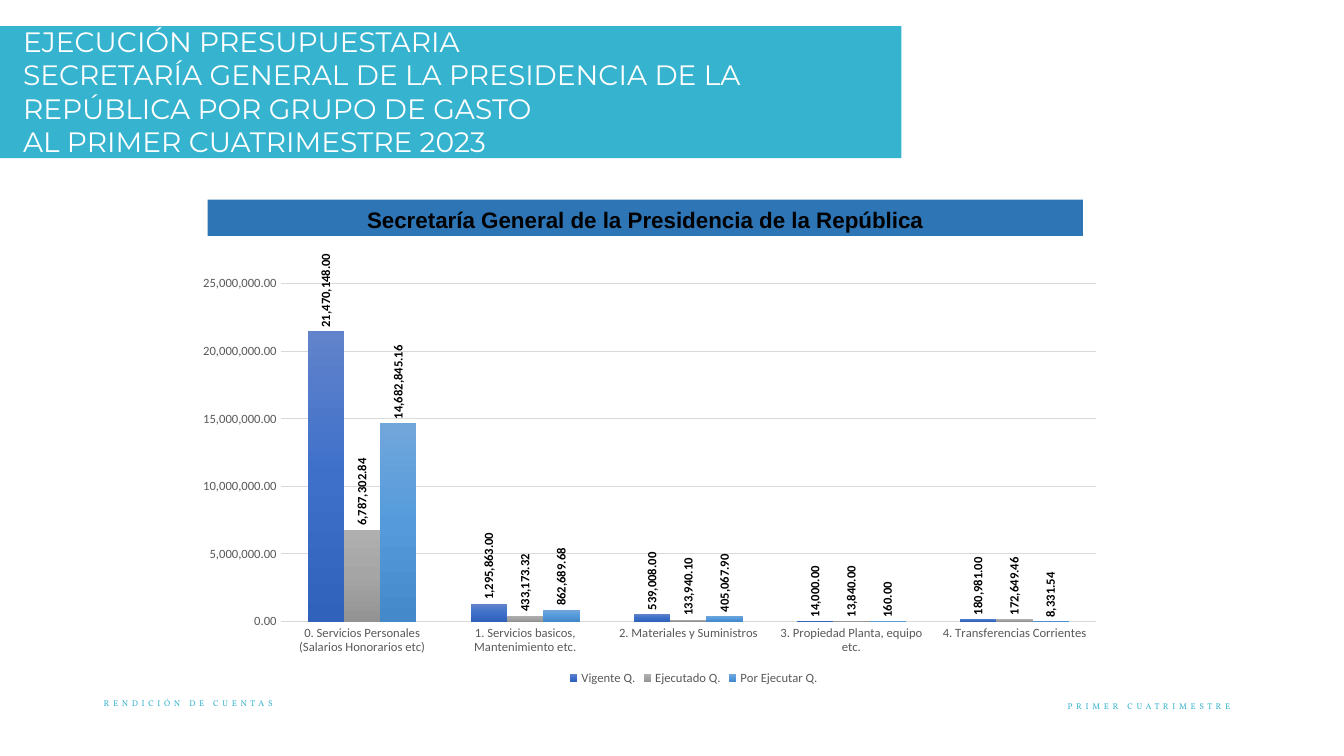
from lxml import etree
from pptx import Presentation
from pptx.chart.data import CategoryChartData
from pptx.dml.color import RGBColor
from pptx.enum.chart import XL_CHART_TYPE, XL_LABEL_POSITION, XL_LEGEND_POSITION, XL_TICK_MARK
from pptx.enum.shapes import MSO_SHAPE
from pptx.enum.text import MSO_ANCHOR, PP_ALIGN
from pptx.oxml.ns import qn
from pptx.util import Inches, Pt

COLUMNS = XL_CHART_TYPE.COLUMN_CLUSTERED
OUTSIDE_END = XL_LABEL_POSITION.OUTSIDE_END
BOTTOM = XL_LEGEND_POSITION.BOTTOM
NO_TICK = XL_TICK_MARK.NONE
RECTANGLE = MSO_SHAPE.RECTANGLE
TOP, MIDDLE = MSO_ANCHOR.TOP, MSO_ANCHOR.MIDDLE
LEFT, CENTER = PP_ALIGN.LEFT, PP_ALIGN.CENTER

TURQUOISE = RGBColor(0x36, 0xB3, 0xCE)
BANNER_BLUE = RGBColor(0x2E, 0x75, 0xB6)
WHITE = RGBColor(0xFF, 0xFF, 0xFF)
BLACK = RGBColor(0, 0, 0)
AXIS_GRAY = RGBColor(0x59, 0x59, 0x59)
GRID_GRAY = RGBColor(0xD9, 0xD9, 0xD9)
BLUE_STOPS = [RGBColor(0x61, 0x83, 0xCB), RGBColor(0x3E, 0x70, 0xCA), RGBColor(0x30, 0x62, 0xBB)]
GRAY_STOPS = [RGBColor(0xAF, 0xAF, 0xAF), RGBColor(0xA5, 0xA5, 0xA5), RGBColor(0x93, 0x93, 0x93)]
SKY_STOPS = [RGBColor(0x71, 0xA6, 0xDB), RGBColor(0x55, 0x9B, 0xDB), RGBColor(0x44, 0x8A, 0xCA)]
AMOUNT = "#,##0.00"


def write(text, left, top, width, height, *, size, font, color, fill=None, bold=False,
          align=LEFT, anchor=TOP, margins=(0.1, 0.05, 0.1, 0.05), tracking=0, line_spacing=1.0):
    """Add a text box, or a rectangle when a fill is given; one paragraph per line of text."""
    place = [Inches(value) for value in (left, top, width, height)]
    if fill is None:
        box = slide.shapes.add_textbox(*place)
    else:
        box = slide.shapes.add_shape(RECTANGLE, *place)
        box.shadow.inherit = False
        box.fill.solid()
        box.fill.fore_color.rgb = fill
        box.line.fill.background()
    frame = box.text_frame
    frame.word_wrap = True
    frame.vertical_anchor = anchor
    (frame.margin_left, frame.margin_top,
     frame.margin_right, frame.margin_bottom) = [Inches(value) for value in margins]
    for index, line in enumerate(text.split("\n")):
        paragraph = frame.add_paragraph() if index else frame.paragraphs[0]
        paragraph.alignment = align
        paragraph.line_spacing = line_spacing
        run = paragraph.add_run()
        run.text = line
        style_font(run.font, size, color, font, bold)
        if tracking:
            run.font._element.set("spc", str(tracking))


def style_font(font, size, color, name="Calibri", bold=False):
    font.size = Pt(size)
    font.name = name
    font.bold = bold
    font.color.rgb = color


presentation = Presentation()
presentation.slide_width = Inches(13.33)
presentation.slide_height = Inches(7.5)
slide = presentation.slides.add_slide(presentation.slide_layouts[6])

# Footers
for footer, left, top, tracking in [("RENDICIÓN DE CUENTAS", 0.93, 6.83, 265),
                                    ("PRIMER CUATRIMESTRE", 10.49, 6.86, 265)]:
    write(footer, left, top, 2.48, 0.3, size=6, font="Vollkorn", color=TURQUOISE,
          anchor=MIDDLE, margins=(0.1, 0.1, 0.14, 0.1), tracking=tracking)

# Title
title_band = slide.shapes.add_shape(RECTANGLE, 0, Inches(0.26), Inches(8.94), Inches(1.31))
title_band.shadow.inherit = False
title_band.fill.solid()
title_band.fill.fore_color.rgb = TURQUOISE
title_band.line.fill.background()
write("EJECUCIÓN PRESUPUESTARIA\n"
      "SECRETARÍA GENERAL DE LA PRESIDENCIA DE LA REPÚBLICA POR GRUPO DE GASTO\n"
      "AL PRIMER CUATRIMESTRE 2023",
      0.13, 0.19, 8.69, 1.45, size=20, font="Montserrat", color=WHITE)

# Budget chart
budget = CategoryChartData(number_format=AMOUNT)
budget.categories = [
    "0. Servicios Personales (Salarios Honorarios etc)",
    "1. Servicios basicos, Mantenimiento etc.",
    "2. Materiales y Suministros",
    "3. Propiedad Planta, equipo etc.",
    "4. Transferencias Corrientes",
]
budget.add_series("Vigente Q.", [21470148, 1295863, 539008, 14000, 180981])
budget.add_series("Ejecutado Q.", [6787302.84, 433173.32, 133940.10, 13840, 172649.46])
budget.add_series("Por Ejecutar Q.", [14682845.16, 862689.68, 405067.90, 160, 8331.54])
chart = slide.shapes.add_chart(COLUMNS, Inches(1.6), Inches(2.23), Inches(10.56), Inches(4.61),
                               budget).chart
style_font(chart.font, 10, BLACK)
chart.has_title = False
chart.has_legend = True
chart.legend.position = BOTTOM
chart.legend.include_in_layout = False
style_font(chart.legend.font, 9, AXIS_GRAY)

groups, amounts = chart.category_axis, chart.value_axis
for axis in (groups, amounts):
    axis.major_tick_mark = axis.minor_tick_mark = NO_TICK
    style_font(axis.tick_labels.font, 9, AXIS_GRAY)
groups.format.line.color.rgb = GRID_GRAY
groups.format.line.width = Pt(1)
amounts.format.line.fill.background()
amounts.minimum_scale, amounts.maximum_scale, amounts.major_unit = 0, 25000000, 5000000
amounts.tick_labels.number_format = AMOUNT
amounts.tick_labels.number_format_is_linked = False
amounts.major_gridlines.format.line.color.rgb = GRID_GRAY
amounts.major_gridlines.format.line.width = Pt(0.75)

columns = chart.plots[0]
columns.gap_width = 150
columns.overlap = 0
columns.vary_by_categories = False
for series, stops in zip(columns.series, (BLUE_STOPS, GRAY_STOPS, SKY_STOPS)):
    series.invert_if_negative = False
    series.format.fill.gradient()
    gradient = series._element.find(".//" + qn("a:gradFill"))
    stop_list = gradient.find(qn("a:gsLst"))
    for stop in list(stop_list):
        stop_list.remove(stop)
    for position, color in zip((0, 50000, 100000), stops):
        stop = etree.SubElement(stop_list, qn("a:gs"), pos=str(position))
        etree.SubElement(stop, qn("a:srgbClr"), val=str(color))
    gradient.find(qn("a:lin")).set("ang", "5400000")

    labels = series.data_labels
    labels.show_value = True
    labels.position = OUTSIDE_END
    labels.number_format = AMOUNT
    labels.number_format_is_linked = False
    style_font(labels.font, 9, BLACK, bold=True)
    label_body = labels._element.find(".//" + qn("a:bodyPr"))
    label_body.set("rot", "-5400000")
    label_body.set("vert", "horz")

# Fixed inner plot area
plot_area = chart._chartSpace.find(".//" + qn("c:plotArea"))
layout = plot_area.find(qn("c:layout"))
if layout is None:
    layout = etree.Element(qn("c:layout"))
    plot_area.insert(0, layout)
manual = etree.SubElement(layout, qn("c:manualLayout"))
for tag, value in [("layoutTarget", "inner"), ("xMode", "edge"), ("yMode", "edge"),
                   ("x", "0.112"), ("y", "0.127"), ("w", "0.766"), ("h", "0.727")]:
    etree.SubElement(manual, qn("c:" + tag), val=value)

# Chart banner
write("Secretaría General de la Presidencia de la República", 2.06, 1.98, 8.68, 0.36,
      size=16, font="Arial", color=BLACK, fill=BANNER_BLUE, bold=True, align=CENTER,
      line_spacing=1.07)

presentation.save("out.pptx")
